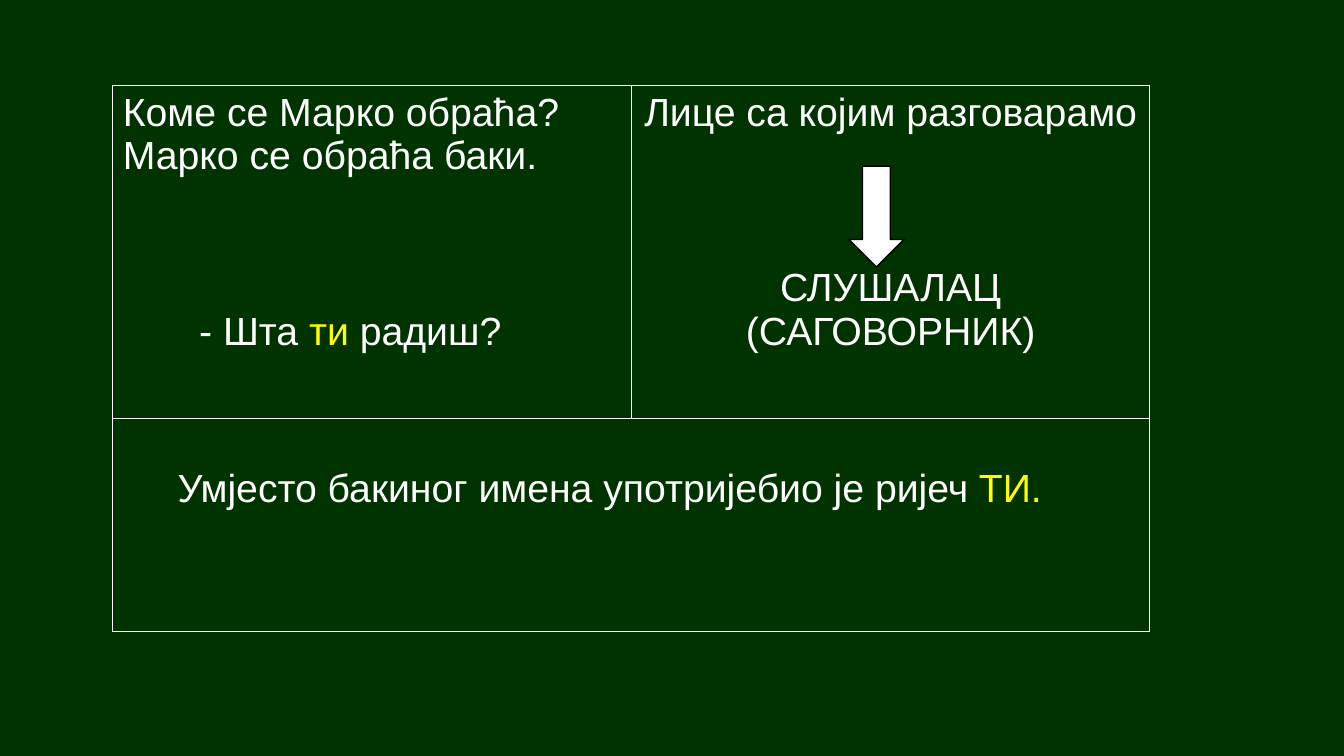
"""Build the slide about the listener as the second person."""
from lxml.etree import SubElement
from pptx import Presentation
from pptx.dml.color import RGBColor
from pptx.enum.shapes import MSO_SHAPE
from pptx.enum.text import PP_ALIGN
from pptx.oxml.ns import qn
from pptx.util import Pt

THEME = {
    "board": RGBColor.from_string("003300"),
    "chalk": RGBColor.from_string("FFFFFF"),
    "mark": RGBColor.from_string("FFFF00"),
    "edge": RGBColor.from_string("000000"),
    "font": "Arial",
    "size": Pt(28),
    "line": Pt(1),
}


def frame(cell):
    """Draw a thin line on each side of a cell."""
    props = cell._tc.get_or_add_tcPr()
    for side in ("lnL", "lnR", "lnT", "lnB"):
        line = SubElement(props, qn(f"a:{side}"), w=str(THEME["line"]))
        fill = SubElement(line, qn("a:solidFill"))
        SubElement(fill, qn("a:srgbClr"), val=str(THEME["chalk"]))


def write(cell, lines, align):
    """Fill a cell with lines of (space before, indent, runs)."""
    text = cell.text_frame
    for i, (space, indent, runs) in enumerate(lines):
        para = text.paragraphs[0] if i == 0 else text.add_paragraph()
        para.alignment = align
        if space:
            para.space_before = Pt(space)
        if indent:
            para._p.get_or_add_pPr().set("marL", str(Pt(indent)))
        for words, tone in runs:
            run = para.add_run()
            run.text = words
            look = {"name": THEME["font"], "size": THEME["size"]}
            for key, value in look.items():
                setattr(run.font, key, value)
            run.font.color.rgb = THEME[tone]


deck = Presentation()
deck.slide_width, deck.slide_height = Pt(960), Pt(540)
slide = deck.slides.add_slide(deck.slide_layouts[6])
back = slide.background.fill
back.solid()
back.fore_color.rgb = THEME["board"]

table = slide.shapes.add_table(2, 2, Pt(80.6), Pt(61.2), Pt(740.8), Pt(389.6)).table
table.first_row = table.horz_banding = False
for row, height in zip(table.rows, (237.6, 152)):
    row.height = Pt(height)
for column in table.columns:
    column.width = Pt(370.4)
for cell in table.iter_cells():
    frame(cell)
    cell.fill.background()
table.cell(1, 0).merge(table.cell(1, 1))
table.cell(1, 0).margin_top = Pt(35)

texts = [
    (0, 0, PP_ALIGN.LEFT, [
        (0, 0, [("Коме се Марко обраћа?", "chalk")]),
        (0, 0, [("Марко се обраћа баки.", "chalk")]),
        (94, 54.5, [("- Шта ", "chalk"), ("ти", "mark"), (" радиш?", "chalk")]),
    ]),
    (0, 1, PP_ALIGN.CENTER, [
        (0, 0, [("Лице са којим разговарамо", "chalk")]),
        (94, 0, [("СЛУШАЛАЦ", "chalk")]),
        (0, 0, [("(САГОВОРНИК)", "chalk")]),
    ]),
    (1, 0, PP_ALIGN.LEFT, [
        (0, 39, [("Умјесто бакиног имена употријебио је ријеч ", "chalk"),
                 ("ТИ.", "mark")]),
    ]),
]
for row, column, align, lines in texts:
    write(table.cell(row, column), lines, align)

arrow = slide.shapes.add_shape(
    MSO_SHAPE.DOWN_ARROW, Pt(606.2), Pt(118.8), Pt(39.6), Pt(72))
arrow.shadow.inherit = False
arrow.fill.solid()
arrow.fill.fore_color.rgb = THEME["chalk"]
arrow.line.color.rgb = THEME["edge"]
arrow.line.width = THEME["line"]

deck.save("out.pptx")
